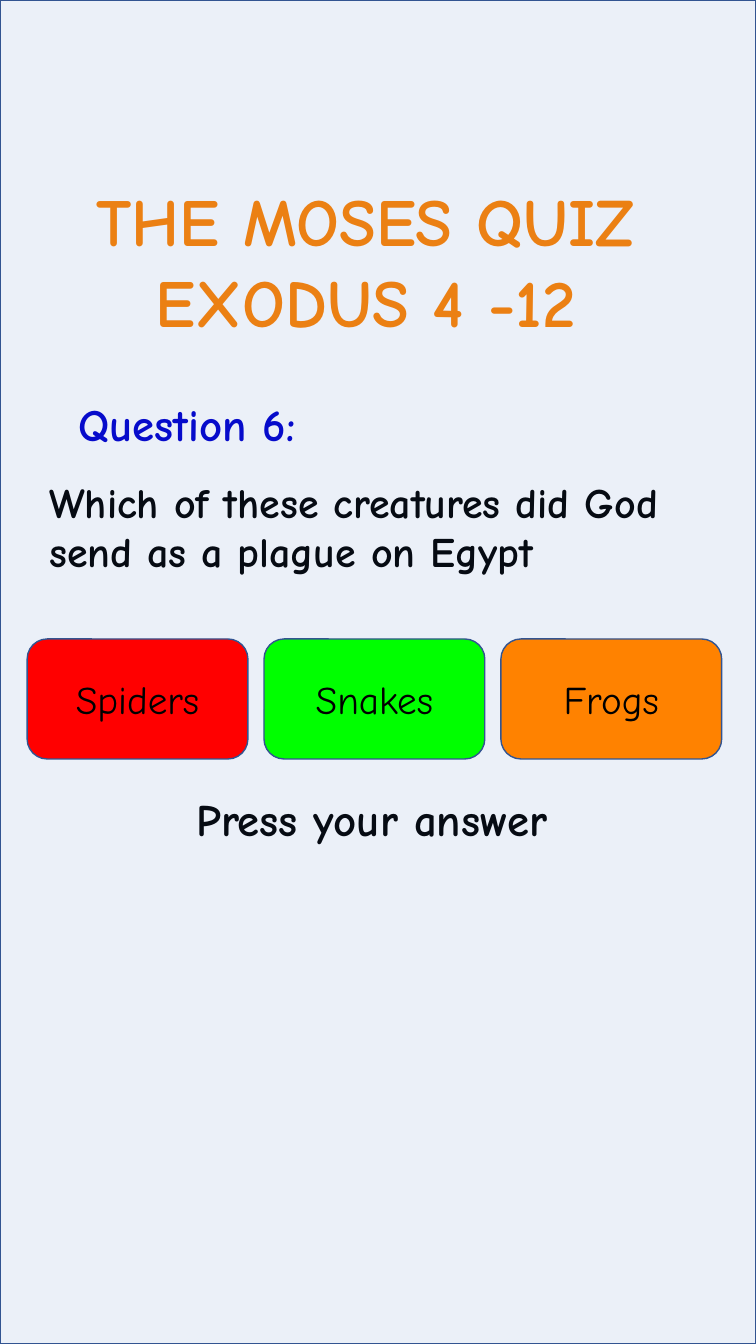
"""Build the Moses quiz slide with one question and three answer buttons."""
from dataclasses import dataclass

from lxml import etree
from pptx import Presentation
from pptx.dml.color import RGBColor
from pptx.enum.shapes import MSO_SHAPE
from pptx.enum.text import MSO_ANCHOR, MSO_AUTO_SIZE, PP_ALIGN
from pptx.oxml.ns import qn
from pptx.util import Pt

RECTANGLE = MSO_SHAPE.RECTANGLE
ROUNDED = MSO_SHAPE.ROUNDED_RECTANGLE
TOP, MIDDLE = MSO_ANCHOR.TOP, MSO_ANCHOR.MIDDLE
NO_FIT = MSO_AUTO_SIZE.NONE
LEFT, CENTER = PP_ALIGN.LEFT, PP_ALIGN.CENTER


@dataclass(frozen=True)
class Theme:
    font: str = "Comic Neue"
    black: str = "000000"
    blue: str = "0000CC"
    red: str = "FF0000"
    green: str = "00FF00"
    orange: str = "FF8200"
    tint: str = "4472C4"
    outline: str = "325491"
    title_size: int = 48
    heading_size: int = 32
    question_size: int = 30
    answer_size: int = 28


class QuizSlide:
    def __init__(self, presentation, theme):
        self.theme = theme
        self.slide = presentation.slides.add_slide(presentation.slide_layouts[0])

    def set_text(self, shape, text, size, color, bold=True, align=LEFT,
                 anchor=TOP, wrap=True, spacing=1.0, before=0):
        frame = shape.text_frame
        frame.text = text
        frame.auto_size = NO_FIT
        frame.word_wrap = wrap
        frame.vertical_anchor = anchor
        for paragraph in frame.paragraphs:
            paragraph.alignment = align
            paragraph.line_spacing = spacing
            paragraph.space_before = Pt(before)
            for run in paragraph.runs:
                run.font.name = self.theme.font
                run.font.size = Pt(size)
                run.font.bold = bold
                run.font.color.rgb = RGBColor.from_string(color)

    def placeholder(self, index, box, text, size, color, **style):
        shape = self.slide.placeholders[index]
        shape.left, shape.top, shape.width, shape.height = map(Pt, box)
        self.set_text(shape, text, size, color, **style)

    def label(self, box, text, size, color, **style):
        shape = self.slide.shapes.add_textbox(*map(Pt, box))
        self.set_text(shape, text, size, color, **style)

    def panel(self, kind, box, color):
        shape = self.slide.shapes.add_shape(kind, *map(Pt, box))
        shape.shadow.inherit = False
        shape.fill.solid()
        shape.fill.fore_color.rgb = RGBColor.from_string(color)
        shape.line.color.rgb = RGBColor.from_string(self.theme.outline)
        shape.line.width = Pt(1)
        return shape

    def veil(self, box, color, opacity):
        shape = self.panel(RECTANGLE, box, color)
        fill_color = shape.element.spPr.find(qn("a:solidFill"))[0]
        etree.SubElement(fill_color, qn("a:alpha"), val=str(opacity * 1000))

    def button(self, box, text, color):
        shape = self.panel(ROUNDED, box, color)
        self.set_text(shape, text, self.theme.answer_size, self.theme.black,
                      bold=False, align=CENTER, anchor=MIDDLE)


def main():
    theme = Theme()
    width, height = 540, 959.76
    presentation = Presentation()
    presentation.slide_width, presentation.slide_height = Pt(width), Pt(height)
    quiz = QuizSlide(presentation, theme)

    quiz.placeholder(0, (21.6, 124.5, 496, 124), "THE MOSES QUIZ \nEXODUS 4 -12 ",
                     theme.title_size, theme.orange, align=CENTER, wrap=False)
    quiz.placeholder(1, (28, 337.7, 484.5, 105),
                     "Which of these creatures did God send as a plague on Egypt",
                     theme.question_size, theme.black, spacing=Pt(35), before=7.5)
    quiz.label((33.8, 280, 199.5, 46), "Question 6:",
               theme.heading_size, theme.blue, align=CENTER, wrap=False)
    quiz.label((133.2, 566, 304, 52), "Press your answer",
               theme.heading_size, theme.black, spacing=0.9, before=7.5)
    quiz.veil((0, 0, width, height), theme.tint, opacity=10)

    answers = (("Spiders", theme.red), ("Snakes", theme.green), ("Frogs", theme.orange))
    for column, (answer, color) in enumerate(answers):
        quiz.button((19.4 + 169.2 * column, 456.3, 157.7, 85.7), answer, color)

    presentation.save("out.pptx")


if __name__ == "__main__":
    main()
